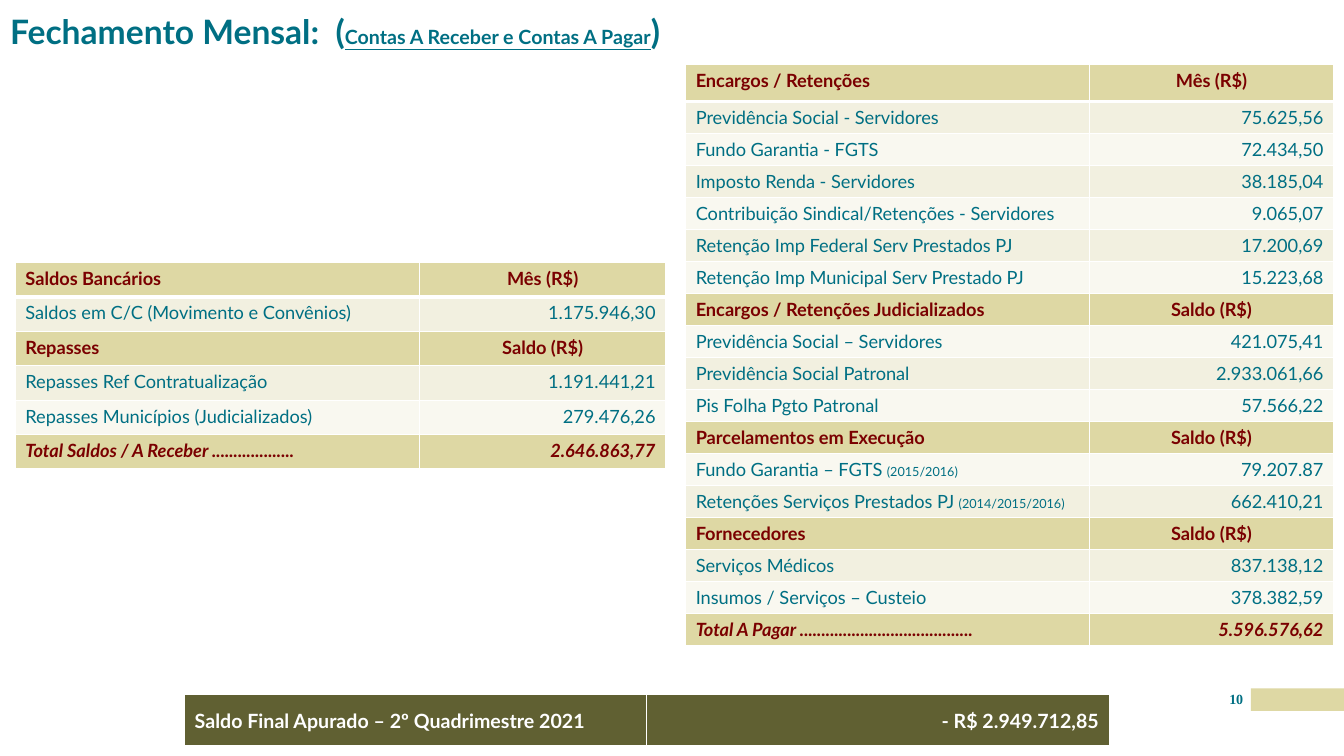
from lxml.etree import SubElement
from pptx import Presentation
from pptx.dml.color import RGBColor
from pptx.enum.shapes import MSO_SHAPE
from pptx.enum.text import MSO_ANCHOR, MSO_AUTO_SIZE, PP_ALIGN
from pptx.oxml.ns import qn
from pptx.util import Pt

COLORS = {
    "teal": "006F83",
    "maroon": "7A0000",
    "sand": "DED8A4",
    "band_odd": "F2F0E0",
    "band_even": "F9F8F0",
    "olive": "606032",
    "white": "FFFFFF",
}

PAYABLES = [
    ("Encargos / Retenções", "Mês (R$)"),
    ("Previdência Social - Servidores", "75.625,56"),
    ("Fundo Garantia - FGTS", "72.434,50"),
    ("Imposto Renda - Servidores", "38.185,04"),
    ("Contribuição Sindical/Retenções - Servidores", "9.065,07"),
    ("Retenção Imp Federal Serv Prestados PJ", "17.200,69"),
    ("Retenção Imp Municipal Serv Prestado PJ", "15.223,68"),
    ("Encargos / Retenções Judicializados", "Saldo (R$)"),
    ("Previdência Social – Servidores", "421.075,41"),
    ("Previdência Social Patronal", "2.933.061,66"),
    ("Pis Folha Pgto Patronal", "57.566,22"),
    ("Parcelamentos em Execução", "Saldo (R$)"),
    ("Fundo Garantia – FGTS ", "79.207.87", "(2015/2016)"),
    ("Retenções Serviços Prestados PJ ", "662.410,21", "(2014/2015/2016)"),
    ("Fornecedores", "Saldo (R$)"),
    ("Serviços Médicos", "837.138,12"),
    ("Insumos / Serviços – Custeio", "378.382,59"),
    ("Total A Pagar ........................................", "5.596.576,62"),
]

RECEIVABLES = [
    ("Saldos Bancários", "Mês (R$)"),
    ("Saldos em C/C (Movimento e Convênios)", "1.175.946,30"),
    ("Repasses", "Saldo (R$)"),
    ("Repasses Ref Contratualização", "1.191.441,21"),
    ("Repasses Municípios (Judicializados)", "279.476,26"),
    ("Total Saldos / A Receber ...................", "2.646.863,77"),
]


class ClosingSlide:
    def __init__(self, slide, font="Lato"):
        self.slide = slide
        self.font = font

    def color(self, name):
        return RGBColor.from_string(COLORS[name])

    def style(self, run, size, color, bold=False, italic=False, font=None):
        run.font.name = font or self.font
        run.font.size = Pt(size)
        run.font.bold = bold
        run.font.italic = italic
        run.font.color.rgb = self.color(color)

    def clear_margins(self, frame):
        frame.margin_left = frame.margin_right = 0
        frame.margin_top = frame.margin_bottom = 0

    def title(self, before, topic, after):
        heading = self.slide.shapes.title
        heading.left, heading.top = Pt(7.2), Pt(10.8)
        heading.width, heading.height = Pt(936.7), Pt(36)
        frame = heading.text_frame
        self.clear_margins(frame)
        frame.auto_size = MSO_AUTO_SIZE.NONE
        frame.vertical_anchor = MSO_ANCHOR.TOP
        line = frame.paragraphs[0]
        line.alignment = PP_ALIGN.LEFT
        line.line_spacing = 0.9
        for words, size in ((before, 24), (topic, 14), (after, 24)):
            run = line.add_run()
            run.text = words
            self.style(run, size, "teal", bold=True)
            run.font.underline = words == topic

    def bar(self, left, top, width, height):
        accent = self.slide.shapes.add_shape(
            MSO_SHAPE.RECTANGLE, Pt(left), Pt(top), Pt(width), Pt(height))
        accent.shadow.inherit = False
        accent.fill.solid()
        accent.fill.fore_color.rgb = self.color("sand")
        accent.line.fill.background()

    def page_number(self, number, left, top, width, height):
        frame = self.slide.shapes.add_textbox(
            Pt(left), Pt(top), Pt(width), Pt(height)).text_frame
        self.clear_margins(frame)
        frame.word_wrap = True
        frame.text = number
        frame.paragraphs[0].alignment = PP_ALIGN.CENTER
        self.style(frame.paragraphs[0].runs[0], 10, "teal", bold=True,
                   font="Times New Roman")

    def grid(self, left, top, widths, heights):
        table = self.slide.shapes.add_table(
            len(heights), len(widths), Pt(left), Pt(top),
            Pt(sum(widths)), Pt(sum(heights))).table
        for column, width in zip(table.columns, widths):
            column.width = Pt(width)
        for row, height in zip(table.rows, heights):
            row.height = Pt(height)
        return table

    def paint_cell(self, cell, fill, top_line, bottom_line):
        """Draw the white cell borders, then the fill that must follow them."""
        properties = cell._tc.get_or_add_tcPr()
        for side, points in zip("LRTB", (1, 1, top_line, bottom_line)):
            border = SubElement(properties, qn(f"a:ln{side}"), w=str(Pt(points)))
            solid = SubElement(border, qn("a:solidFill"))
            SubElement(solid, qn("a:srgbClr"), val=COLORS["white"])
        cell.fill.solid()
        cell.fill.fore_color.rgb = self.color(fill)

    def write_cell(self, cell, words, alignment, **style):
        cell.text_frame.text = words
        line = cell.text_frame.paragraphs[0]
        line.alignment = alignment
        self.style(line.runs[0], **style)
        return line

    def ledger(self, entries, left, top, widths, heights):
        """Table whose section headings and total stand out from banded rows."""
        table = self.grid(left, top, widths, heights)
        for index, (label, amount, *years) in enumerate(entries):
            heading = amount.endswith("(R$)")
            total = label.startswith("Total")
            strong = heading or total
            fill = "sand" if strong else "band_odd" if index % 2 else "band_even"
            style = dict(size=13, color="maroon" if strong else "teal",
                         bold=strong, italic=total)
            label_cell, amount_cell = table.rows[index].cells
            for cell in (label_cell, amount_cell):
                self.paint_cell(cell, fill, 3 if index == 1 else 1,
                                3 if index == 0 else 1)
            line = self.write_cell(label_cell, label, PP_ALIGN.LEFT, **style)
            for note in years:
                run = line.add_run()
                run.text = note
                self.style(run, 9, "teal")
            self.write_cell(amount_cell, amount,
                            PP_ALIGN.CENTER if heading else PP_ALIGN.RIGHT, **style)

    def final_balance(self, label, amount, left, top, widths, height):
        table = self.grid(left, top, widths, [height])
        contents = ((label, PP_ALIGN.LEFT), (amount, PP_ALIGN.RIGHT))
        for cell, (words, alignment) in zip(table.rows[0].cells, contents):
            self.paint_cell(cell, "olive", 1, 3)
            cell.vertical_anchor = MSO_ANCHOR.MIDDLE
            self.write_cell(cell, words, alignment, size=14, color="white", bold=True)


def main():
    deck = Presentation()
    deck.slide_width, deck.slide_height = Pt(960), Pt(540)
    closing = ClosingSlide(deck.slides.add_slide(deck.slide_layouts[5]))
    closing.bar(893.5, 491.8, 66.5, 16)
    closing.page_number("10", 872.6, 493.2, 20.9, 18)
    closing.title("Fechamento Mensal:  (", "Contas A Receber e Contas A Pagar", ")")
    closing.ledger(PAYABLES, 489.8, 46.2, [288.5, 174.2],
                   [26.2] + [22.8] * (len(PAYABLES) - 1))
    closing.ledger(RECEIVABLES, 11, 187.5, [288.9, 175.5],
                   [24.6] * len(RECEIVABLES))
    closing.final_balance("Saldo Final Apurado – 2º Quadrimestre 2021",
                          "- R$ 2.949.712,85", 131.9, 496.3, [330.2, 330.2], 37.1)
    deck.save("out.pptx")


if __name__ == "__main__":
    main()
